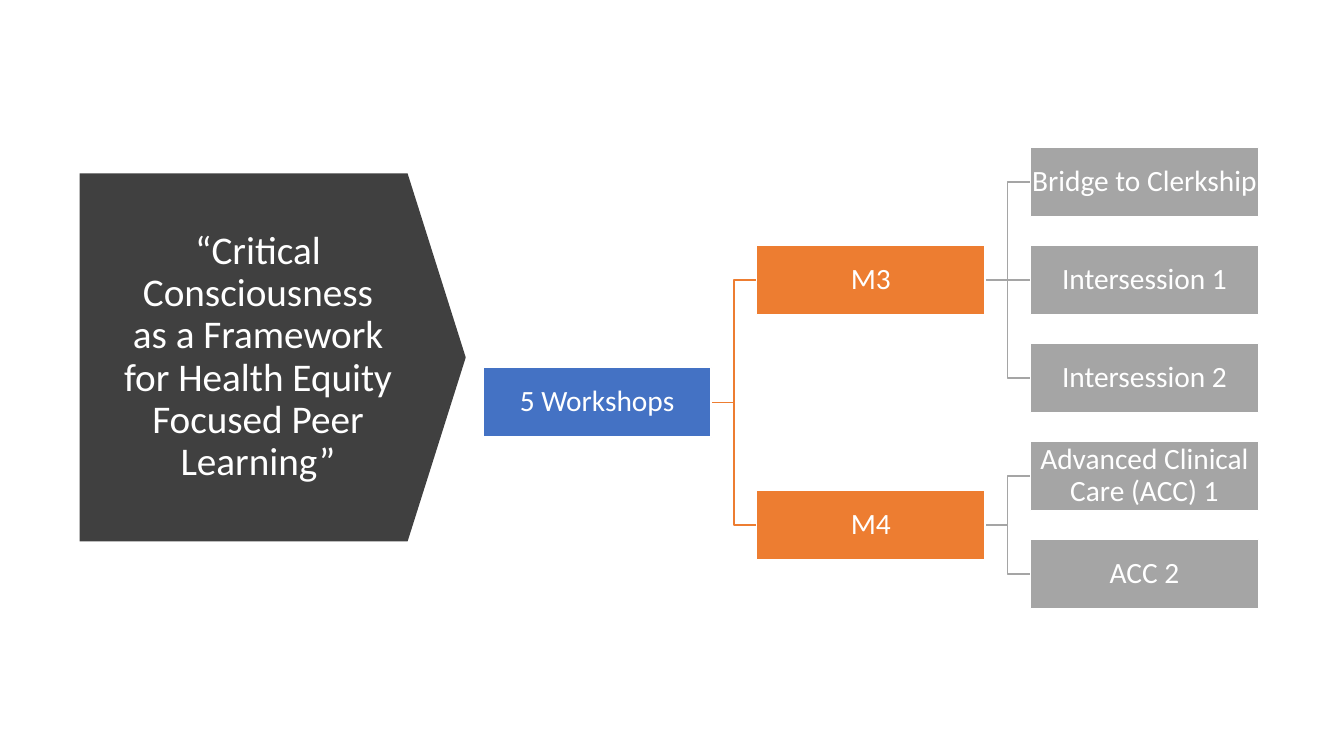
"""Build a slide with a course title arrow and a tree of its workshops."""
from dataclasses import dataclass, field

from pptx import Presentation
from pptx.dml.color import RGBColor
from pptx.enum.shapes import MSO_CONNECTOR as Link, MSO_SHAPE as Preset
from pptx.enum.text import MSO_ANCHOR as Anchor, MSO_AUTO_SIZE as AutoSize, PP_ALIGN as Align
from pptx.oxml.ns import qn
from pptx.shapes.autoshape import Shape
from pptx.slide import Slide
from pptx.util import Pt
from lxml.etree import SubElement


@dataclass(frozen=True)
class Theme:
    font: str = "Calibri"
    title_size: float = 28
    box_size: float = 21
    line_width: float = 1
    white: RGBColor = RGBColor(0xFF, 0xFF, 0xFF)
    arrow: RGBColor = RGBColor(0x40, 0x40, 0x40)
    levels: tuple[RGBColor, ...] = (
        RGBColor(0x44, 0x72, 0xC4),
        RGBColor(0xED, 0x7D, 0x31),
        RGBColor(0xA5, 0xA5, 0xA5),
    )


@dataclass(frozen=True)
class Node:
    label: str
    row: float
    children: list["Node"] = field(default_factory=list)


THEME = Theme()
TITLE = "“Critical Consciousness as a Framework for Health Equity Focused Peer Learning”"
WORKSHOPS = Node("5 Workshops", 2.25, [
    Node("M3", 1, [
        Node("Bridge to Clerkship", 0),
        Node("Intersession 1", 1),
        Node("Intersession 2", 2),
    ]),
    Node("M4", 3.5, [
        Node("Advanced Clinical Care (ACC) 1", 3),
        Node("ACC 2", 4),
    ]),
])
TREE_LEFT, COLUMN_STEP = 345, 195.5
FIRST_CENTRE, ROW_STEP = 130, 70
BOX_WIDTH, BOX_HEIGHT = 163, 49.6


def write_text(shape: Shape, text: str, size: float) -> None:
    frame = shape.text_frame
    frame.word_wrap = True
    frame.auto_size = AutoSize.NONE
    frame.vertical_anchor = Anchor.MIDDLE
    para = frame.paragraphs[0]
    para.alignment = Align.CENTER
    para.line_spacing = 0.9
    span = para.add_run()
    span.text = text
    span.font.name = THEME.font
    span.font.size = Pt(size)
    span.font.color.rgb = THEME.white


def add_title(slide: Slide) -> None:
    title = slide.shapes.title
    title.left, title.top, title.width, title.height = Pt(80.6), Pt(154.8), Pt(207.4), Pt(200.9)
    write_text(title, TITLE, THEME.title_size)
    arrow = slide.shapes.add_shape(Preset.DOWN_ARROW, Pt(63.4), Pt(117.4), Pt(262.8), Pt(275.8))
    arrow.rotation = 270
    arrow.adjustments[0], arrow.adjustments[1] = 1, 0.158
    arrow.shadow.inherit = False
    arrow.fill.solid()
    arrow.fill.fore_color.rgb = THEME.arrow
    arrow.line.fill.background()
    title.element.addprevious(arrow.element)


def add_box(slide: Slide, node: Node, level: int) -> Shape:
    left = TREE_LEFT + level * COLUMN_STEP
    top = FIRST_CENTRE + node.row * ROW_STEP - BOX_HEIGHT / 2
    box = slide.shapes.add_shape(Preset.RECTANGLE, Pt(left), Pt(top), Pt(BOX_WIDTH), Pt(BOX_HEIGHT))
    box.shadow.inherit = False
    box.fill.solid()
    box.fill.fore_color.rgb = THEME.levels[level]
    box.line.color.rgb = THEME.white
    box.line.width = Pt(THEME.line_width)
    frame = box.text_frame
    frame.margin_left = frame.margin_right = frame.margin_top = frame.margin_bottom = Pt(1)
    write_text(box, node.label, THEME.box_size)
    return box


def add_link(slide: Slide, parent: Shape, child: Shape, kind: Link, colour: RGBColor) -> None:
    link = slide.shapes.add_connector(kind, 0, 0, 0, 0)
    link.begin_connect(parent, 3)
    link.end_connect(child, 1)
    link.line.color.rgb = colour
    link.line.width = Pt(THEME.line_width)
    SubElement(link.element.spPr, qn("a:effectLst"))
    parent.element.addprevious(link.element)


def add_tree(slide: Slide, node: Node, level: int = 0) -> Shape:
    box = add_box(slide, node, level)
    for child in node.children:
        kind = Link.STRAIGHT if child.row == node.row else Link.ELBOW
        add_link(slide, box, add_tree(slide, child, level + 1), kind, THEME.levels[level + 1])
    return box


def main() -> None:
    deck = Presentation()
    deck.slide_width, deck.slide_height = Pt(960), Pt(540)
    slide = deck.slides.add_slide(deck.slide_layouts.get_by_name("Title Only"))
    add_title(slide)
    add_tree(slide, WORKSHOPS)
    deck.save("out.pptx")


if __name__ == "__main__":
    main()
